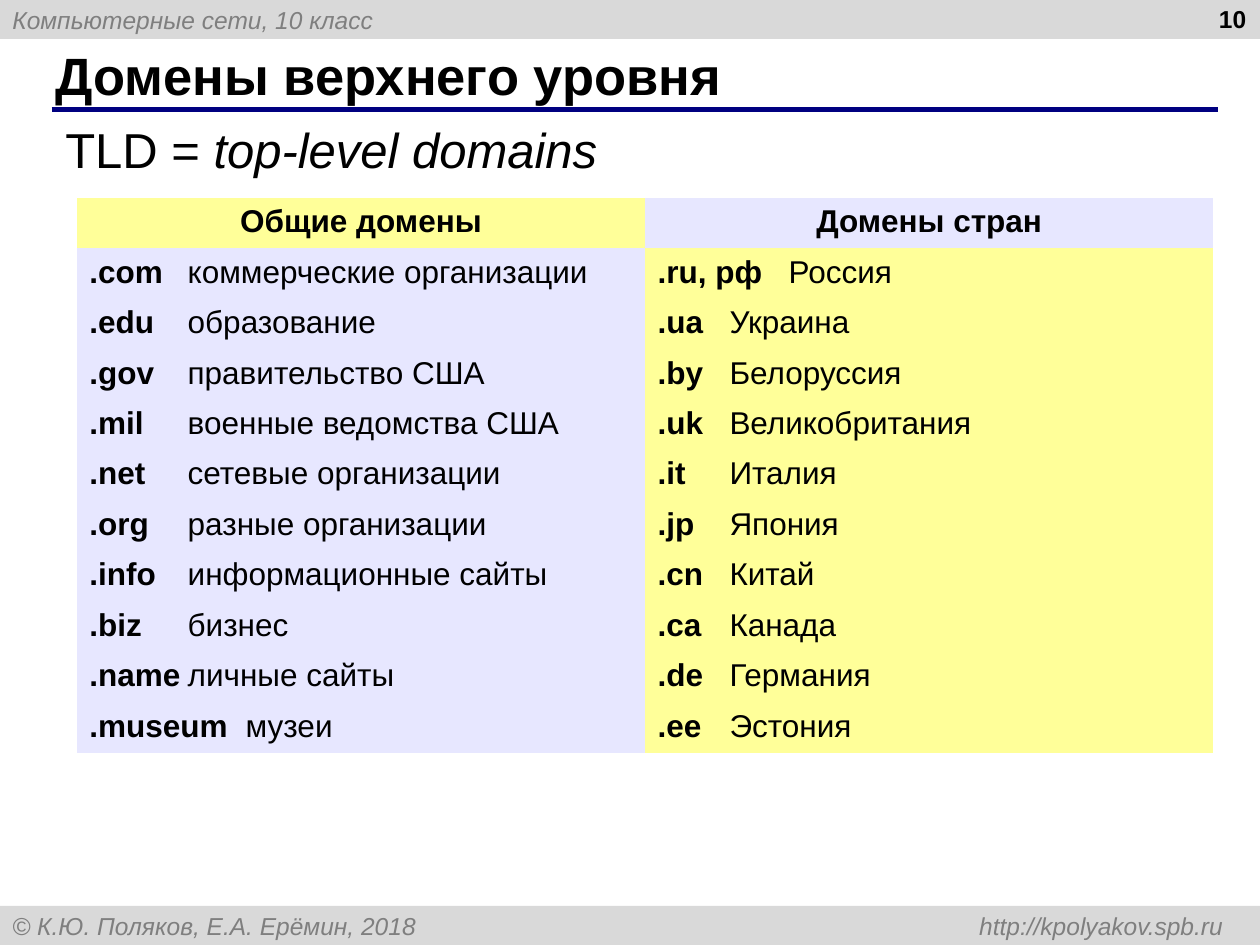
from lxml.etree import SubElement
from pptx import Presentation
from pptx.dml.color import RGBColor
from pptx.enum.shapes import MSO_CONNECTOR, MSO_SHAPE
from pptx.enum.text import MSO_ANCHOR, MSO_AUTO_SIZE, PP_ALIGN
from pptx.oxml.ns import qn
from pptx.util import Inches, Pt

COLORS = {
    "band": "D9D9D9",
    "band_text": "7F7F7F",
    "rule": "000080",
    "text": "000000",
    "yellow": "FFFF99",
    "lilac": "E7E7FF",
}
HEADINGS = ("Общие домены", "Домены стран")
GENERIC = [
    (".com", "коммерческие организации"),
    (".edu", "образование"),
    (".gov", "правительство США"),
    (".mil", "военные ведомства США"),
    (".net", "сетевые организации"),
    (".org", "разные организации"),
    (".info", "информационные сайты"),
    (".biz", "бизнес"),
    (".name", "личные сайты"),
    (".museum", "музеи"),
]
COUNTRIES = [
    (".ru, рф", "Россия"),
    (".ua", "Украина"),
    (".by", "Белоруссия"),
    (".uk", "Великобритания"),
    (".it", "Италия"),
    (".jp", "Япония"),
    (".cn", "Китай"),
    (".ca", "Канада"),
    (".de", "Германия"),
    (".ee", "Эстония"),
]


def add_run(p, text, size, color="text", **formats):
    r = p.add_run()
    r.text = text
    r.font.color.rgb = RGBColor.from_string(COLORS[color])
    for name, value in {"name": "Arial", "size": Pt(size), **formats}.items():
        setattr(r.font, name, value)


def add_tabs(p, stops, align="l"):
    """Set tab stops, in inches from the left of the text."""
    tabs = SubElement(p._p.get_or_add_pPr(), qn("a:tabLst"))
    for stop in stops:
        SubElement(tabs, qn("a:tab"), pos=str(Inches(stop)), algn=align)


prs = Presentation()
prs.slide_width, prs.slide_height = Inches(10), Inches(7.5)
s = prs.slides.add_slide(prs.slide_layouts[5])

# Header and footer bands
for top, text in (
    (0, "Компьютерные сети, 10 класс"),
    (7.19, "© К.Ю. Поляков, Е.А. Ерёмин, 2018 \thttp://kpolyakov.spb.ru"),
):
    sp = s.shapes.add_shape(MSO_SHAPE.RECTANGLE, 0, Inches(top), Inches(10), Inches(0.31))
    sp.shadow.inherit = False
    sp.fill.solid()
    sp.fill.fore_color.rgb = RGBColor.from_string(COLORS["band"])
    sp.line.fill.background()
    tf = sp.text_frame
    tf.vertical_anchor = MSO_ANCHOR.MIDDLE
    p = tf.paragraphs[0]
    p.alignment = PP_ALIGN.LEFT
    if "\t" in text:
        add_tabs(p, [9.61], "r")
    add_run(p, text, 14, "band_text", italic=True)

# Rule under the title
rule = s.shapes.add_connector(
    MSO_CONNECTOR.STRAIGHT, Inches(0.41), Inches(0.87), Inches(9.67), Inches(0.87))
rule.line.color.rgb = RGBColor.from_string(COLORS["rule"])
rule.line.width = Pt(3)
SubElement(rule._element.spPr, qn("a:effectLst"))

# Title
title = s.shapes.title
title.left, title.top, title.width, title.height = map(Inches, (0.34, 0.33, 9.16, 0.52))
tf = title.text_frame
tf.auto_size = MSO_AUTO_SIZE.NONE
tf.vertical_anchor = MSO_ANCHOR.MIDDLE
p = tf.paragraphs[0]
p.alignment = PP_ALIGN.LEFT
add_run(p, "Домены верхнего уровня", 30, bold=True)

# Page number
number = s.shapes.add_textbox(Inches(7.66), Inches(-0.02), Inches(2.33), Inches(0.52))
number.text_frame.word_wrap = True
p = number.text_frame.paragraphs[0]
p.alignment = PP_ALIGN.RIGHT
add_run(p, "10", 14, bold=True)

# Table of domains
table = s.shapes.add_table(
    len(GENERIC) + 1, 2, Inches(0.61), Inches(1.57), Inches(9.02), Inches(4.4)).table
columns = (
    (GENERIC, "yellow", "lilac", (0.78, 1.24)),
    (COUNTRIES, "lilac", "yellow", (0.57, 1.04)),
)
for col, (domains, head_fill, body_fill, stops) in enumerate(columns):
    for row in range(len(domains) + 1):
        cell = table.cell(row, col)
        cell.fill.solid()
        cell.fill.fore_color.rgb = RGBColor.from_string(
            COLORS[body_fill if row else head_fill])
        p = cell.text_frame.paragraphs[0]
        if row == 0:
            p.alignment = PP_ALIGN.CENTER
            add_run(p, HEADINGS[col], 18, bold=True)
        else:
            domain, meaning = domains[row - 1]
            add_tabs(p, stops)
            add_run(p, domain + "\t", 18, bold=True)
            add_run(p, meaning, 18, bold=False)
        # Plain cells without the borders of the table style
        for side in ("a:lnL", "a:lnR", "a:lnT", "a:lnB"):
            ln = cell._tc.tcPr.makeelement(qn(side), {"w": "0"})
            SubElement(ln, qn("a:noFill"))
            cell._tc.tcPr.find(qn("a:solidFill")).addprevious(ln)

# Meaning of the abbreviation
tld = s.shapes.add_textbox(Inches(0.42), Inches(0.9), Inches(4.59), Inches(0.57))
tld.text_frame.word_wrap = False
tld.text_frame.auto_size = MSO_AUTO_SIZE.SHAPE_TO_FIT_TEXT
p = tld.text_frame.paragraphs[0]
add_run(p, "TLD = ", 28)
add_run(p, "top-level domains", 28, italic=True)

prs.save("out.pptx")
